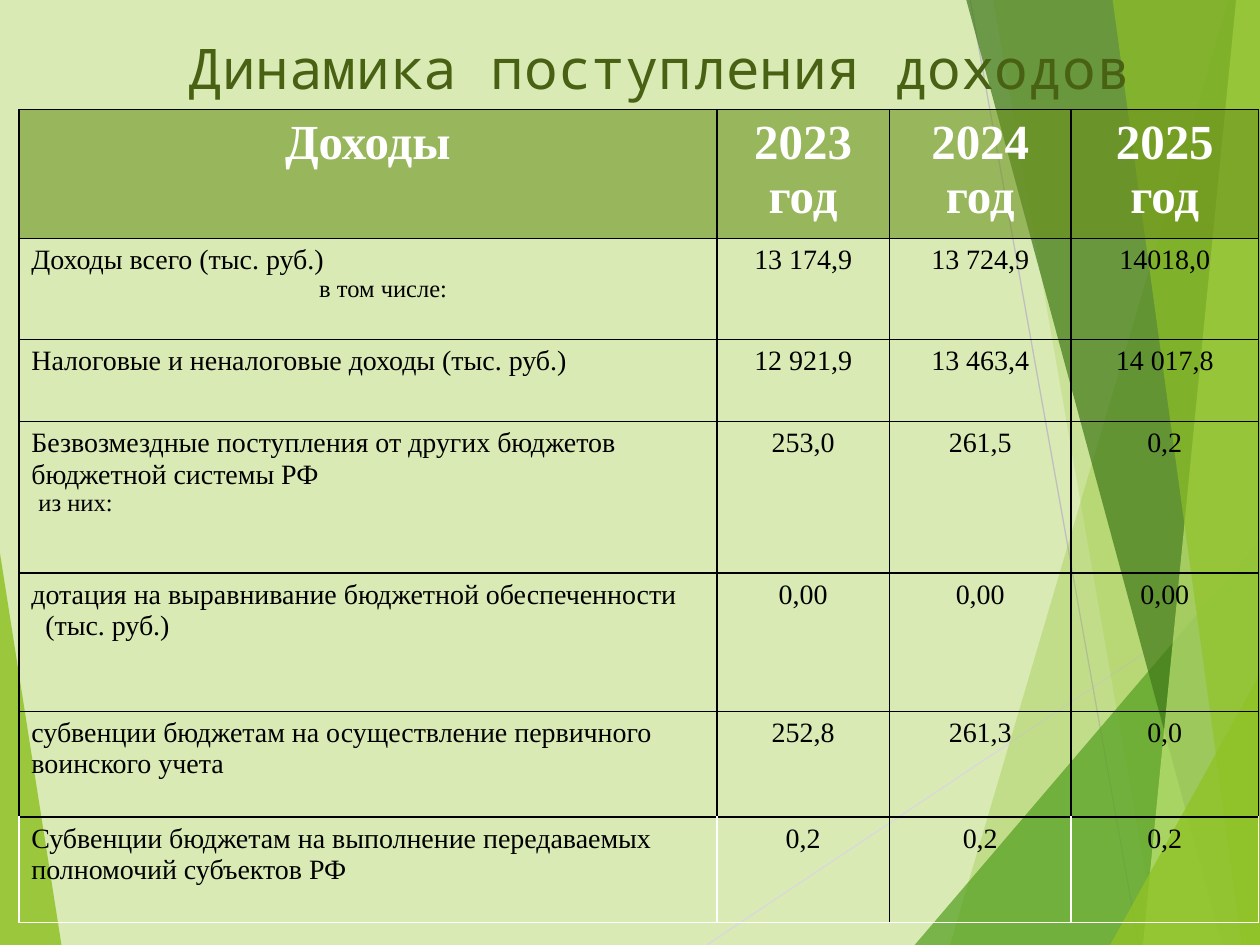
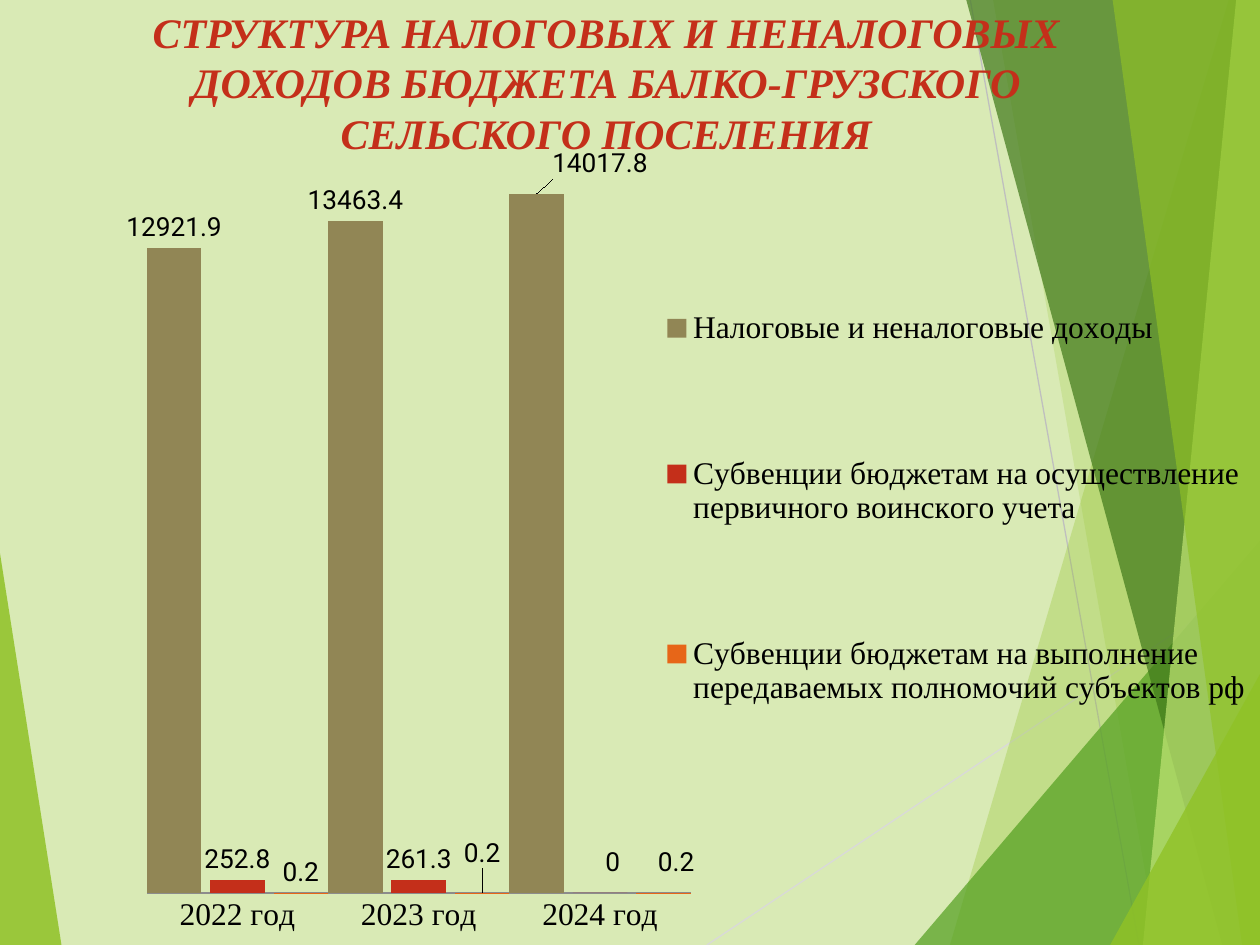
from lxml import etree
from pptx import Presentation
from pptx import util as u
from pptx.chart.data import CategoryChartData
from pptx.dml.color import RGBColor
from pptx.enum import chart as charts, shapes, text
from pptx.oxml import parse_xml
from pptx.oxml.ns import nsdecls, qn

# Shared look
WIDTH, HEIGHT = 25.4, 19.05
LEAF, BLACK, WHITE = "90C226", "000000", "FFFFFF"
SERIF, SANS, MONO = "Times New Roman", "Roboto", "Noto Sans Mono"


def paint(fill, colour, opacity=100):
    fill.solid()
    fill.fore_color.rgb = RGBColor.from_string(colour)
    if opacity < 100:
        colour_node = fill._xPr.find(qn("a:solidFill")).find(qn("a:srgbClr"))
        etree.SubElement(colour_node, qn("a:alpha")).set("val", str(opacity * 1000))


def set_font(font, colour, values):
    for attribute, value in values.items():
        setattr(font, attribute, value)
    paint(font.fill, colour)


deck = Presentation()
deck.slide_width, deck.slide_height = u.Cm(WIDTH), u.Cm(HEIGHT)
title_only = deck.slide_layouts[5]
income, structure = [deck.slides.add_slide(title_only) for _ in range(2)]

# Background facets, placed on the master
paint(deck.slide_master.background.fill, "D9EAB5")
TOP_RIGHT, BOTTOM_RIGHT = (WIDTH, 0), (WIDTH, HEIGHT)
facets = [
    ([(0, 11.15), (1.24, HEIGHT), (0, HEIGHT)], LEAF, 85),
    ([(24.77, 0), (19.15, HEIGHT), BOTTOM_RIGHT, TOP_RIGHT], LEAF, 30),
    ([(20.02, 0), (23.34, HEIGHT), BOTTOM_RIGHT, TOP_RIGHT], LEAF, 20),
    ([(18.44, HEIGHT), (WIDTH, 10.9), BOTTOM_RIGHT], "54A021", 72),
    ([(19.48, 0), (24.64, HEIGHT), BOTTOM_RIGHT, TOP_RIGHT], "3F7819", 70),
    ([(24.92, 0), (23.04, HEIGHT), BOTTOM_RIGHT, TOP_RIGHT], "C0E474", 70),
    ([(22.43, 0), (25.04, HEIGHT), BOTTOM_RIGHT, TOP_RIGHT], LEAF, 65),
    ([(22.38, HEIGHT), (WIDTH, 13.59), BOTTOM_RIGHT], LEAF, 80),
]
rays = [
    ((14.25, HEIGHT), (WIDTH, 11.61), "D9D9D9"),
    ((19.56, 0), (22.96, HEIGHT), "BFBFBF"),
]
backdrop = income.shapes.add_group_shape()
for start, end, colour in rays:
    ray = backdrop.shapes.add_connector(
        shapes.MSO_CONNECTOR.STRAIGHT, *[u.Cm(c) for c in start + end])
    ray.line.width = u.Pt(0.75)
    paint(ray.line.fill, colour)
    etree.SubElement(ray.element.spPr, qn("a:effectLst"))
for corners, colour, opacity in facets:
    points = [(u.Cm(x), u.Cm(y)) for x, y in corners]
    builder = backdrop.shapes.build_freeform(*points[0])
    builder.add_line_segments(points[1:], close=True)
    facet = builder.convert_to_shape()
    facet.shadow.inherit = False
    facet.line.fill.background()
    paint(facet.fill, colour, opacity)
for number, properties in enumerate(backdrop.element.xpath(".//p:cNvPr"), 100):
    properties.set("id", str(number))
deck.slide_master.shapes._spTree.append(backdrop.element)

# Titles
headings = [
    (income, "Динамика поступления доходов", (2.69, 0.53, 21.21, 1.63),
     text.MSO_ANCHOR.MIDDLE, "486113", {"name": MONO, "size": u.Pt(32)}),
    (structure,
     "СТРУКТУРА НАЛОГОВЫХ И НЕНАЛОГОВЫХ ДОХОДОВ БЮДЖЕТА БАЛКО-ГРУЗСКОГО СЕЛЬСКОГО ПОСЕЛЕНИЯ",
     (2.49, 0, 19.46, 2.92), text.MSO_ANCHOR.TOP, "C42F1A",
     {"name": SERIF, "size": u.Pt(24), "bold": True, "italic": True}),
]
for slide, wording, box, anchor, colour, values in headings:
    heading = slide.shapes.title
    for side, length in zip(("left", "top", "width", "height"), box):
        setattr(heading, side, u.Cm(length))
    frame = heading.text_frame
    frame.text = wording
    frame.word_wrap = True
    frame.auto_size = text.MSO_AUTO_SIZE.NONE
    frame.vertical_anchor = anchor
    frame.paragraphs[0].alignment = text.PP_ALIGN.CENTER
    set_font(frame.paragraphs[0].runs[0].font, colour, values)

# Income table: a label is a list of (line, size, indent in cm)
rows = [
    ([("Доходы", 28, 0)], ["2023 год", "2024 год", "2025 год"], 2.6),
    ([("Доходы всего (тыс. руб.)", 16, 0), ("в том числе:", 14, 5.8)],
     ["13 174,9", "13 724,9", "14018,0"], 2.03),
    ([("Налоговые и неналоговые доходы (тыс. руб.)", 16, 0)],
     ["12 921,9", "13 463,4", "14 017,8"], 1.66),
    ([("Безвозмездные поступления от других бюджетов бюджетной системы РФ", 16, 0),
      ("из них:", 14, 0.14)], ["253,0", "261,5", "0,2"], 3.05),
    ([("дотация на выравнивание бюджетной обеспеченности", 16, 0),
      ("(тыс. руб.)", 16, 0.28)], ["0,00", "0,00", "0,00"], 2.79),
    ([("субвенции бюджетам на осуществление первичного воинского учета", 16, 0)],
     ["252,8", "261,3", "0,0"], 2.13),
    ([("Субвенции бюджетам на выполнение передаваемых полномочий субъектов РФ", 16, 0)],
     ["0,2", "0,2", "0,2"], 2.13),
]
column_widths = [14.07, 3.48, 3.66, 3.78]
income_table = income.shapes.add_table(
    len(rows), len(column_widths), u.Cm(0.38), u.Cm(2.21),
    u.Cm(sum(column_widths)), u.Cm(sum(row[2] for row in rows))).table
income_table.first_row = income_table.horz_banding = False
for column, width in zip(income_table.columns, column_widths):
    column.width = u.Cm(width)

for r, (label, amounts, height) in enumerate(rows):
    income_table.rows[r].height = u.Cm(height)
    header, last = r == 0, r == len(rows) - 1
    contents = [label] + [[(amount, 28 if header else 16, 0)] for amount in amounts]
    for c, lines in enumerate(contents):
        cell = income_table.cell(r, c)
        cell.text = "\n".join(line for line, _, _ in lines)
        for paragraph, (_, size, indent) in zip(cell.text_frame.paragraphs, lines):
            if header or c:
                paragraph.alignment = text.PP_ALIGN.CENTER
            if indent:
                paragraph._p.get_or_add_pPr().set("marL", str(u.Cm(indent)))
            set_font(paragraph.runs[0].font, WHITE if header else BLACK,
                     {"name": SERIF, "size": u.Pt(size), "bold": header})
        if header:
            paint(cell.fill, "6C921D", 59)
        else:
            cell.fill.background()

        # The last row is edged in white, except on top and in the middle
        edges = {
            "lnL": WHITE if last and c != 2 else BLACK,
            "lnR": WHITE if last and c != 1 else BLACK,
            "lnT": BLACK,
            "lnB": WHITE if last else BLACK,
        }
        for place, (edge, colour) in enumerate(edges.items()):
            cell._tc.get_or_add_tcPr().insert(place, parse_xml(
                f'<a:{edge} {nsdecls("a")} w="12700"><a:solidFill>'
                f'<a:srgbClr val="{colour}"/></a:solidFill></a:{edge}>'))

# Structure chart: moved labels are {point: (dx, dy)} in shares of the chart
revenue = [
    ("Налоговые и неналоговые доходы", (12921.9, 13463.4, 14017.8),
     "918655", "0.0", {2: (0.05, -0.01)}),
    ("Субвенции бюджетам на осуществление первичного воинского учета",
     (252.8, 261.3, 0), "C42F1A", "General", {2: (0.01, -0.01)}),
    ("Субвенции бюджетам на выполнение передаваемых полномочий субъектов рф",
     (0.2, 0.2, 0.2), "E76618", "General", {1: (0, -0.02), 2: (0.01, -0.01)}),
]
chart_data = CategoryChartData()
chart_data.categories = ["2022 год", "2023 год", "2024 год"]
for name, values, *_ in revenue:
    chart_data.add_series(name, values)
chart = structure.shapes.add_chart(
    charts.XL_CHART_TYPE.COLUMN_CLUSTERED, u.Cm(-0.1), 0, u.Cm(25.5), u.Cm(19.15),
    chart_data).chart
chart.has_title = False
set_font(chart.font, BLACK, {"name": SANS, "size": u.Pt(18)})

years, scale = chart.category_axis, chart.value_axis
years.major_tick_mark = charts.XL_TICK_MARK.NONE
years.format.line.width = u.Pt(1)
paint(years.format.line.fill, "8C8C8C")
scale_format = {"visible": False, "has_major_gridlines": False,
                "minimum_scale": 0, "maximum_scale": 16000}
for attribute, value in scale_format.items():
    setattr(scale, attribute, value)

chart.has_legend = True
chart.legend.position = charts.XL_LEGEND_POSITION.TOP
chart.legend.include_in_layout = True
for font in (years.tick_labels.font, chart.legend.font):
    set_font(font, BLACK, {"name": SERIF, "size": u.Pt(18)})

columns = chart.plots[0]
columns.gap_width, columns.overlap, columns.vary_by_categories = 0, -16, False
label_font = {"name": SANS, "size": u.Pt(15)}
for series, (_, _, colour, number_format, moved) in zip(columns.series, revenue):
    paint(series.format.fill, colour)
    series.invert_if_negative = False
    labels = series.data_labels
    label_format = {"show_value": True, "number_format": number_format,
                    "number_format_is_linked": False,
                    "position": charts.XL_LABEL_POSITION.OUTSIDE_END}
    for attribute, value in label_format.items():
        setattr(labels, attribute, value)
    set_font(labels.font, BLACK, label_font)
    for point, (dx, dy) in moved.items():
        label = series.points[point].data_label
        label.position = charts.XL_LABEL_POSITION.OUTSIDE_END
        set_font(label.font, BLACK, label_font)
        label._dLbl.insert(1, parse_xml(
            f'<c:layout {nsdecls("c")}><c:manualLayout><c:x val="{dx}"/>'
            f'<c:y val="{dy}"/></c:manualLayout></c:layout>'))

# Fixed places of the plot and the legend
chart_root = chart._chartSpace.chart
layouts = [
    (chart_root.plotArea, '<c:layoutTarget val="inner"/>', (0.12, 0.1, 0.43, 0.84)),
    (chart.legend._element, "", (0.52, 0.21, 0.48, 0.65)),
]
for part, target, shares in layouts:
    for automatic in part.findall(qn("c:layout")):
        part.remove(automatic)
    sizes = "".join(f'<c:{key} val="{share}"/>' for key, share in zip("xywh", shares))
    layout = parse_xml(
        f'<c:layout {nsdecls("c")}><c:manualLayout>{target}<c:xMode val="edge"/>'
        f'<c:yMode val="edge"/>{sizes}</c:manualLayout></c:layout>')
    position = part.find(qn("c:legendPos"))
    part.insert(0 if position is None else 1, layout)

deck.save("out.pptx")
